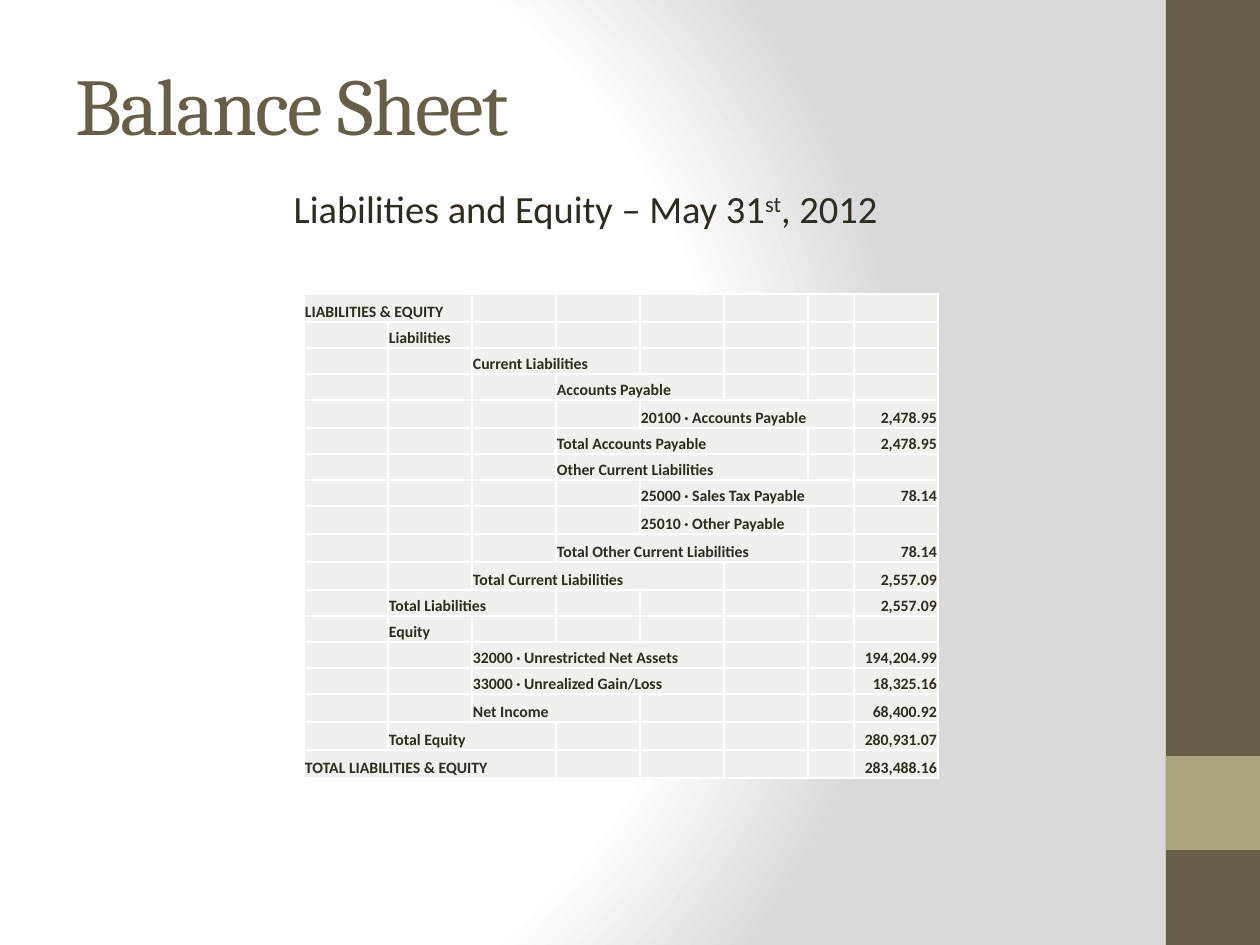
from typing import NamedTuple

import lxml.etree
import pptx
import pptx.dml.color
import pptx.enum.shapes
import pptx.enum.text
import pptx.oxml
import pptx.oxml.ns
import pptx.util

RGB = pptx.dml.color.RGBColor
ALIGN = pptx.enum.text.PP_ALIGN
ANCHOR = pptx.enum.text.MSO_ANCHOR
qn = pptx.oxml.ns.qn

BROWN = RGB(0x67, 0x5E, 0x47)
OLIVE = RGB(0xA9, 0xA5, 0x7C)
INK = RGB(0x2F, 0x2B, 0x20)
PALE = RGB(0xF1, 0xF0, 0xEC)
WHITE = RGB(0xFF, 0xFF, 0xFF)
GREY = RGB(0xDA, 0xDA, 0xDA)

SCALE = 914400 / 126  # EMU in one px
COLS = [84] * 6 + [46, 84]
TALL, SHORT = 28, 26


class Box(NamedTuple):
    left: int
    top: int
    width: int
    height: int


class Entry(NamedTuple):
    label: str
    level: int
    span: int
    amount: str = ""
    height: int = SHORT


ROWS = [
    Entry("LIABILITIES & EQUITY", 0, 2, height=TALL),
    Entry("Liabilities", 1, 1),
    Entry("Current Liabilities", 2, 2),
    Entry("Accounts Payable", 3, 2),
    Entry("20100 · Accounts Payable", 4, 3, "2,478.95", TALL),
    Entry("Total Accounts Payable", 3, 3, "2,478.95"),
    Entry("Other Current Liabilities", 3, 3),
    Entry("25000 · Sales Tax Payable", 4, 3, "78.14"),
    Entry("25010 · Other Payable", 4, 2, height=TALL),
    Entry("Total Other Current Liabilities", 3, 3, "78.14", TALL),
    Entry("Total Current Liabilities", 2, 3, "2,557.09", TALL),
    Entry("Total Liabilities", 1, 2, "2,557.09"),
    Entry("Equity", 1, 1),
    Entry("32000 · Unrestricted Net Assets", 2, 3, "194,204.99"),
    Entry("33000 · Unrealized Gain/Loss", 2, 3, "18,325.16"),
    Entry("Net Income", 2, 2, "68,400.92", TALL),
    Entry("Total Equity", 1, 2, "280,931.07", TALL),
    Entry("TOTAL LIABILITIES & EQUITY", 0, 3, "283,488.16", TALL),
]


def px(num: int) -> int:
    return round(num * SCALE)


def place(box: Box) -> list[int]:
    return [px(num) for num in box]


def style(run, size: int, face: str, color: RGB, bold: bool = False) -> None:
    run.font.size = pptx.util.Pt(size)
    run.font.name = face
    run.font.color.rgb = color
    run.font.bold = bold


def shade(slide) -> None:
    """Give the slide a round gradient that spreads from the left."""
    slide.background.fill.solid()
    back = slide._element.find(".//" + qn("p:bgPr"))
    stops = "".join(
        f'<a:gs pos="{pos * 1000}"><a:srgbClr val="{color}"/></a:gs>'
        for pos, color in [(0, WHITE), (75, WHITE), (100, GREY)]
    )
    back.replace(back[0], pptx.oxml.parse_xml(
        f'<a:gradFill {pptx.oxml.ns.nsdecls("a")} rotWithShape="1">'
        f'<a:gsLst>{stops}</a:gsLst><a:path path="circle">'
        '<a:fillToRect l="20000" t="50000" r="100000" b="50000"/>'
        '</a:path></a:gradFill>'
    ))


def add_block(slide, box: Box, color: RGB) -> None:
    kind = pptx.enum.shapes.MSO_SHAPE.RECTANGLE
    block = slide.shapes.add_shape(kind, *place(box))
    block.shadow.inherit = False
    block.fill.solid()
    block.fill.fore_color.rgb = color
    block.line.fill.background()


def set_title(slide, box: Box, text: str) -> None:
    title = slide.shapes.title
    title.left, title.top, title.width, title.height = place(box)
    frame = title.text_frame
    frame.text = text
    frame.vertical_anchor = ANCHOR.MIDDLE
    para = frame.paragraphs[0]
    para.alignment = ALIGN.LEFT
    style(para.runs[0], 46, "Cambria", BROWN)
    para.runs[0].font._element.set("spc", "-100")


def add_heading(slide, box: Box, parts: list[tuple[str, int]]) -> None:
    frame = slide.shapes.add_textbox(*place(box)).text_frame
    frame.word_wrap = True
    para = frame.paragraphs[0]
    para.alignment = ALIGN.CENTER
    para.space_before = pptx.util.Pt(4.4)
    para._p.get_or_add_pPr().set("marL", str(px(15)))
    for text, rise in parts:
        run = para.add_run()
        run.text = text
        style(run, 22, "Calibri", INK)
        if rise:
            run.font._element.set("baseline", str(rise * 1000))


def format_cell(cell) -> None:
    cell.fill.solid()
    cell.fill.fore_color.rgb = PALE
    cell.vertical_anchor = ANCHOR.BOTTOM
    cell.margin_left = cell.margin_right = cell.margin_top = px(1)
    cell.margin_bottom = 0
    # White borders come before the fill
    props = cell._tc.get_or_add_tcPr()
    for spot, side in enumerate(["lnL", "lnR", "lnT", "lnB"]):
        props.insert(spot, pptx.oxml.parse_xml(
            f'<a:{side} {pptx.oxml.ns.nsdecls("a")} w="12700"><a:solidFill>'
            f'<a:srgbClr val="{WHITE}"/></a:solidFill></a:{side}>'
        ))
    # Empty cells need a small font too, or their rows grow
    para = cell.text_frame.paragraphs[0]
    lxml.etree.SubElement(para._p, qn("a:endParaRPr")).set("sz", "900")


def fill_cell(cell, text: str, align: ALIGN) -> None:
    para = cell.text_frame.paragraphs[0]
    para.text = text
    para.alignment = align
    style(para.runs[0], 9, "Calibri", INK, bold=True)


def add_sheet(slide, left: int, top: int, rows: list[Entry]) -> None:
    box = Box(left, top, sum(COLS), sum(row.height for row in rows))
    table = slide.shapes.add_table(len(rows), len(COLS), *place(box)).table
    table.first_row = table.horz_banding = False
    for col, width in zip(table.columns, COLS):
        col.width = px(width)
    for cell in table.iter_cells():
        format_cell(cell)
    for num, row in enumerate(rows):
        table.rows[num].height = px(row.height)
        label = table.cell(num, row.level)
        if row.span > 1:
            label.merge(table.cell(num, row.level + row.span - 1))
        fill_cell(label, row.label, ALIGN.LEFT)
        if row.amount:
            fill_cell(table.cell(num, len(COLS) - 1), row.amount, ALIGN.RIGHT)


def main() -> None:
    deck = pptx.Presentation()
    deck.slide_width, deck.slide_height = px(1260), px(945)
    slide = deck.slides.add_slide(deck.slide_layouts[5])

    # Background and side bar
    shade(slide)
    add_block(slide, Box(1166, 0, 94, 945), BROWN)
    add_block(slide, Box(1166, 756, 94, 94), OLIVE)

    # Title and heading
    set_title(slide, Box(63, 38, 1050, 130), "Balance Sheet")
    add_heading(slide, Box(53, 179, 1050, 59), [
        ("Liabilities and Equity – May 31", 0), ("st", 30), (", 2012", 0),
    ])

    # Balance sheet
    add_sheet(slide, 304, 294, ROWS)
    deck.save("out.pptx")


if __name__ == "__main__":
    main()
